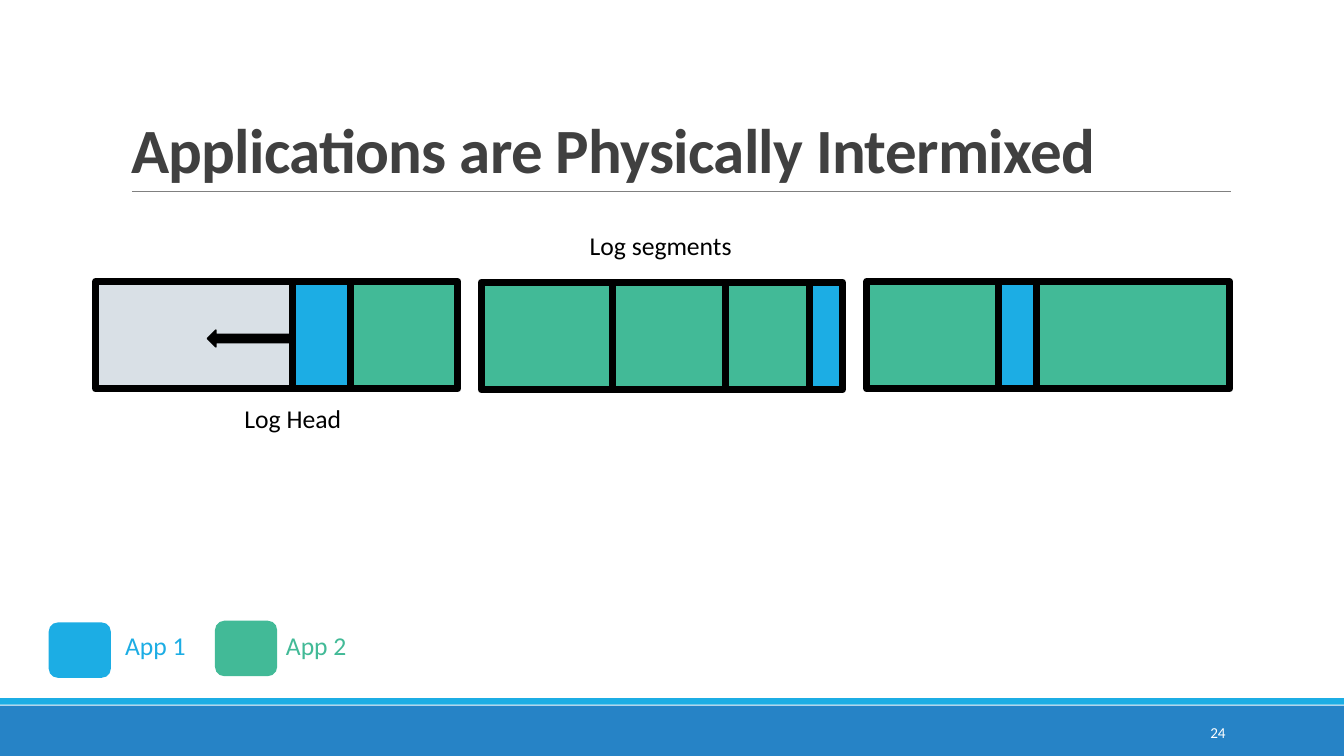
from dataclasses import dataclass

import lxml.etree
import pptx
import pptx.dml.color
import pptx.enum.shapes
import pptx.enum.text
import pptx.oxml.ns
import pptx.util

# Grid: 16 columns by 9 rows, one inch each
COLUMNS, ROWS = 16, 9
CELL = pptx.util.Inches(1)

COLORS = {
    "app1": "1CADE4",
    "app2": "42BA97",
    "free": "D9E0E6",
    "footer": "2683C6",
    "rule": "808080",
    "title": "404040",
    "black": "000000",
    "white": "FFFFFF",
}
SHAPES = pptx.enum.shapes.MSO_SHAPE
ALIGN = pptx.enum.text.PP_ALIGN
ANCHOR = pptx.enum.text.MSO_ANCHOR


@dataclass(frozen=True)
class Box:
    column: float
    row: float
    columns: float
    rows: float

    def lengths(self) -> list[int]:
        return [round(value * CELL)
                for value in (self.column, self.row, self.columns, self.rows)]


@dataclass(frozen=True)
class Segment:
    column: float
    row: float
    blocks: tuple[tuple[str, float], ...]


@dataclass(frozen=True)
class LegendEntry:
    color: str
    label: str
    swatch: Box
    label_box: Box


SEGMENT_ROWS = 1.28
SEGMENTS = (
    Segment(1.14, 3.35, (("free", 2.34), ("app1", 0.69), ("app2", 1.28))),
    Segment(5.73, 3.36, (("app2", 1.56), ("app2", 1.35), ("app2", 1.0), ("app1", 0.39))),
    Segment(10.32, 3.35, (("app2", 1.57), ("app1", 0.45), ("app2", 2.3))),
)
LEGEND = (
    LegendEntry("app1", "App 1", Box(0.58, 7.41, 0.74, 0.66), Box(0.33, 7.18, 3.04, 1.01)),
    LegendEntry("app2", "App 2", Box(2.56, 7.39, 0.74, 0.66), Box(2.48, 7.18, 2.57, 1.01)),
)


def rgb(name: str) -> pptx.dml.color.RGBColor:
    return pptx.dml.color.RGBColor.from_string(COLORS[name])


def add_block(slide, box: Box, fill: str, outline: float = 0, kind=SHAPES.RECTANGLE):
    shape = slide.shapes.add_shape(kind, *box.lengths())
    shape.shadow.inherit = False
    shape.fill.solid()
    shape.fill.fore_color.rgb = rgb(fill)
    if outline:
        shape.line.color.rgb = rgb("black")
        shape.line.width = pptx.util.Pt(outline)
        line = shape.line._get_or_add_ln()
        lxml.etree.SubElement(line, pptx.oxml.ns.qn("a:round"))
    else:
        shape.line.fill.background()
    return shape


def add_text(slide, box: Box, text: str, *, size: float = 22, color: str = "black",
             bold: bool = False, align=ALIGN.CENTER, anchor=ANCHOR.MIDDLE,
             line_spacing: float = 1.0, letter_spacing: float = 0):
    shape = slide.shapes.add_textbox(*box.lengths())
    frame = shape.text_frame
    frame.word_wrap = True
    frame.vertical_anchor = anchor
    frame.margin_left = frame.margin_right = pptx.util.Inches(0.12)
    frame.margin_top = frame.margin_bottom = pptx.util.Inches(0.06)
    paragraph = frame.paragraphs[0]
    paragraph.alignment = align
    paragraph.line_spacing = line_spacing
    run = paragraph.add_run()
    run.text = text
    run.font.name = "Calibri"
    run.font.size = pptx.util.Pt(size)
    run.font.bold = bold
    run.font.color.rgb = rgb(color)
    if letter_spacing:
        run._r.get_or_add_rPr().set("spc", str(round(letter_spacing * 100)))
    return shape


def add_rule(slide, start: float, end: float, row: float):
    rule = slide.shapes.add_connector(
        pptx.enum.shapes.MSO_CONNECTOR.STRAIGHT,
        *(round(value * CELL) for value in (start, row, end, row)))
    rule.line.color.rgb = rgb("rule")
    rule.line.width = pptx.util.Pt(0.5)
    lxml.etree.SubElement(rule._element.spPr, pptx.oxml.ns.qn("a:effectLst"))
    return rule


def add_segment(slide, segment: Segment) -> None:
    column = segment.column
    for color, columns in segment.blocks:
        add_block(slide, Box(column, segment.row, columns, SEGMENT_ROWS), color, outline=6)
        column += columns


def main() -> None:
    presentation = pptx.Presentation()
    presentation.slide_width = COLUMNS * CELL
    presentation.slide_height = ROWS * CELL
    slide = presentation.slides.add_slide(presentation.slide_layouts[6])

    # Footer bands and page number
    add_block(slide, Box(0, 8.4, COLUMNS, 0.6), "footer")
    add_block(slide, Box(0, 8.31, COLUMNS, 0.08), "app1")
    add_text(slide, Box(12.99, 8.48, 1.72, 0.48), "24", size=13, color="white",
             align=ALIGN.RIGHT)

    # Title and rule
    add_rule(slide, 1.57, 14.65, 2.28)
    add_text(slide, Box(1.44, 0.38, 13.2, 1.9), "Applications are Physically Intermixed",
             size=54, color="title", bold=True, align=ALIGN.LEFT, anchor=ANCHOR.BOTTOM,
             line_spacing=0.85, letter_spacing=-0.6)

    # Log segments with the head moving left
    add_text(slide, Box(1.11, 2.69, 13.51, 0.47), "Log segments")
    for segment in SEGMENTS:
        add_segment(slide, segment)
    add_block(slide, Box(2.47, 3.93, 0.97, 0.2), "black", outline=1.25,
              kind=SHAPES.LEFT_ARROW)
    add_text(slide, Box(1.06, 4.74, 4.85, 0.47), "Log Head")

    # Legend
    for entry in LEGEND:
        add_block(slide, entry.swatch, entry.color, kind=SHAPES.ROUNDED_RECTANGLE)
        add_text(slide, entry.label_box, entry.label, color=entry.color)

    presentation.save("out.pptx")


if __name__ == "__main__":
    main()
